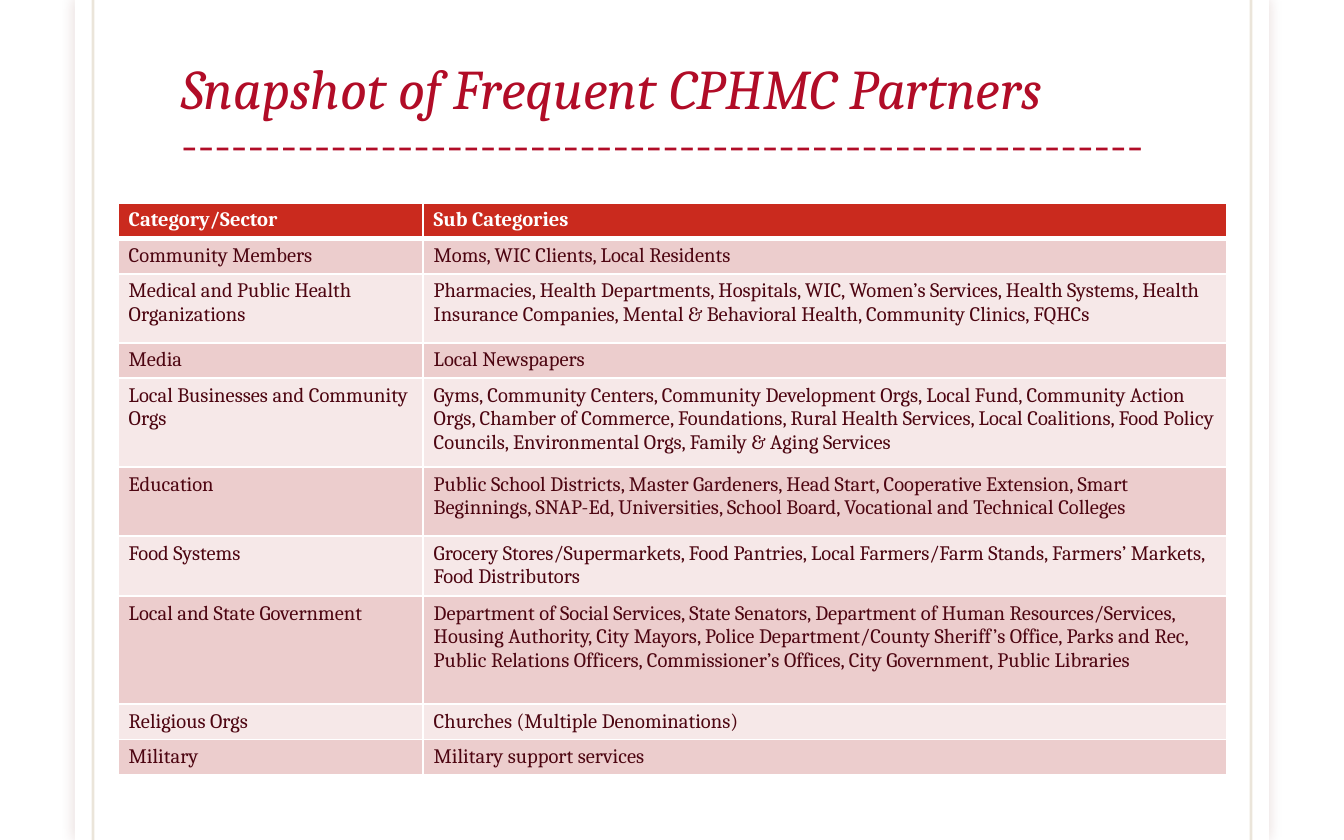
from lxml import etree
from pptx import Presentation
from pptx import util as u
from pptx.dml.color import RGBColor
from pptx.enum import shapes, text
from pptx.oxml import parse_xml
from pptx.oxml.ns import nsdecls, qn

WIDTH, HEIGHT = 1344, 840
FONT = "Cambria"
WHITE, CRIMSON, HEADER_RED = "FFFFFF", "B10C27", "CA2A1E"
BODY_TEXT, BANDS = "4D0511", ("ECCDCD", "F6E8E8")
COLUMN_WIDTHS = (305, 804)
HEADINGS = ("Category/Sector", "Sub Categories")
# Category, sub categories, row height in px
PARTNERS = (
    ("Community Members", "Moms, WIC Clients, Local Residents", 35),
    ("Medical and Public Health Organizations",
     "Pharmacies, Health Departments, Hospitals, WIC, Women’s Services, Health Systems, Health "
     "Insurance Companies, Mental & Behavioral Health, Community Clinics, FQHCs", 69),
    ("Media", "Local Newspapers", 35),
    ("Local Businesses and Community Orgs",
     "Gyms, Community Centers, Community Development Orgs, Local Fund, Community Action Orgs, "
     "Chamber of Commerce, Foundations, Rural Health Services, Local Coalitions, Food Policy "
     "Councils, Environmental Orgs, Family & Aging Services", 89),
    ("Education",
     "Public School Districts, Master Gardeners, Head Start, Cooperative Extension, Smart "
     "Beginnings, SNAP-Ed, Universities, School Board, Vocational and Technical Colleges", 69),
    ("Food Systems",
     "Grocery Stores/Supermarkets, Food Pantries, Local Farmers/Farm Stands, Farmers’ Markets, "
     "Food Distributors", 60),
    ("Local and State Government",
     "Department of Social Services, State Senators, Department of Human Resources/Services, "
     "Housing Authority, City Mayors, Police Department/County Sheriff’s Office, Parks and Rec, "
     "Public Relations Officers, Commissioner’s Offices, City Government, Public Libraries", 108),
    ("Religious Orgs", "Churches (Multiple Denominations)", 35),
    ("Military", "Military support services", 35),
)


def px(length):
    return u.Emu(round(length * 914400 / 134.4))


def color(value):
    return RGBColor.from_string(value)


def add_page(slide):
    """White page with a soft glow-like shadow on both sides."""
    page = slide.shapes.add_shape(shapes.MSO_SHAPE.RECTANGLE, px(75), 0, px(1194), px(HEIGHT))
    page.fill.solid()
    page.fill.fore_color.rgb = color(WHITE)
    page.line.fill.background()
    page.shadow.inherit = False
    effects = page._element.spPr.find(qn("a:effectLst"))
    effects.append(parse_xml(
        f'<a:outerShdw {nsdecls("a")} blurRad="{u.Pt(7)}" dist="0" dir="0" rotWithShape="0">'
        '<a:srgbClr val="65150F"><a:alpha val="15000"/></a:srgbClr></a:outerShdw>'))


def add_margin_line(slide, x):
    line = slide.shapes.add_connector(
        shapes.MSO_CONNECTOR.STRAIGHT, px(x), 0, px(x), px(HEIGHT))
    line.line.width = u.Pt(1.5)
    line.line.color.rgb = color("79540B")
    properties = line._element.spPr
    tint = next(properties.iter(qn("a:srgbClr")))
    etree.SubElement(tint, qn("a:alpha"), val="15000")
    etree.SubElement(properties, qn("a:effectLst"))


def add_title(slide):
    box = slide.shapes.add_textbox(px(168), px(39), px(1008), px(140))
    frame = box.text_frame
    frame.word_wrap = True
    frame.vertical_anchor = text.MSO_ANCHOR.BOTTOM
    paragraph = frame.paragraphs[0]
    paragraph.line_spacing = 0.85
    paragraph.font.name = FONT
    paragraph.font.color.rgb = color(CRIMSON)
    heading = paragraph.add_run()
    heading.text = "Snapshot of Frequent CPHMC Partners"
    heading.font.size = u.Pt(30)
    heading.font.italic = True
    paragraph.add_line_break()
    rule = paragraph.add_run()
    rule.text = "-" * 58
    rule.font.size = u.Pt(27)


def set_borders(cell, top, bottom):
    properties = cell._tc.get_or_add_tcPr()
    for side, width in (("L", 1), ("R", 1), ("T", top), ("B", bottom)):
        properties.append(parse_xml(
            f'<a:ln{side} {nsdecls("a")} w="{u.Pt(width)}"><a:solidFill>'
            f'<a:srgbClr val="{WHITE}"/></a:solidFill></a:ln{side}>'))


def fill_cell(cell, words, row):
    header = row == 0
    set_borders(cell, top=3 if row == 1 else 1, bottom=3 if header else 1)
    cell.fill.solid()
    cell.fill.fore_color.rgb = color(HEADER_RED if header else BANDS[(row - 1) % 2])
    cell.margin_left = cell.margin_right = u.Inches(0.08)
    cell.margin_top = cell.margin_bottom = u.Inches(0.04)
    cell.text = words
    font = cell.text_frame.paragraphs[0].font
    font.name = FONT
    font.size = u.Pt(11)
    font.bold = header
    font.color.rgb = color(WHITE if header else BODY_TEXT)


def add_partner_table(slide):
    rows = ((*HEADINGS, 35), *PARTNERS)
    height = sum(row[2] for row in rows)
    table = slide.shapes.add_table(
        len(rows), len(HEADINGS), px(118), px(203), px(sum(COLUMN_WIDTHS)), px(height)).table
    for column, width in zip(table.columns, COLUMN_WIDTHS):
        column.width = px(width)
    for index, (category, details, row_height) in enumerate(rows):
        table.rows[index].height = px(row_height)
        for column, words in enumerate((category, details)):
            fill_cell(table.cell(index, column), words, index)


def main():
    presentation = Presentation()
    presentation.slide_width, presentation.slide_height = px(WIDTH), px(HEIGHT)
    slide = presentation.slides.add_slide(presentation.slide_layouts[6])
    add_page(slide)
    for x in (93, WIDTH - 93):
        add_margin_line(slide, x)
    add_title(slide)
    add_partner_table(slide)
    presentation.save("out.pptx")


if __name__ == "__main__":
    main()
